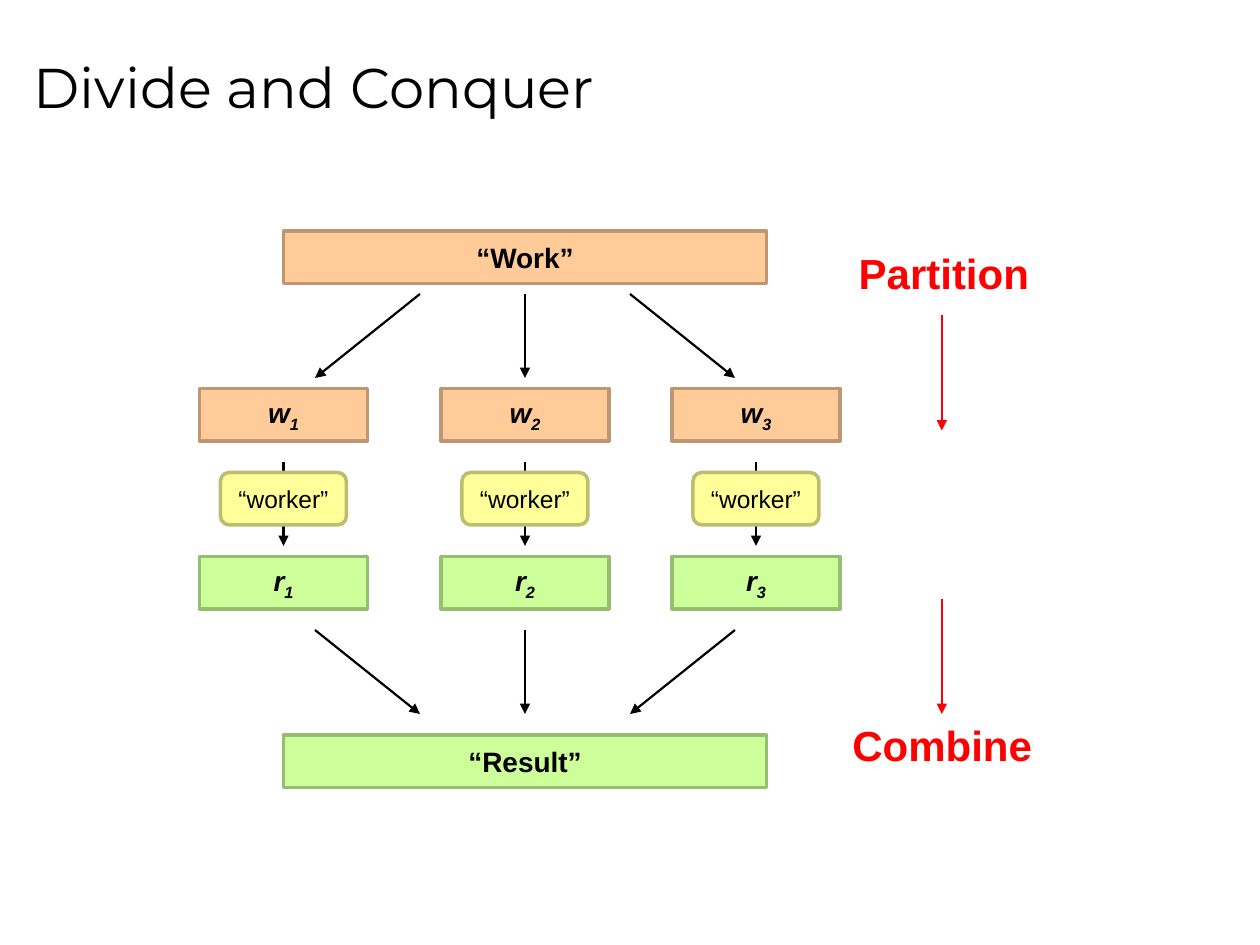
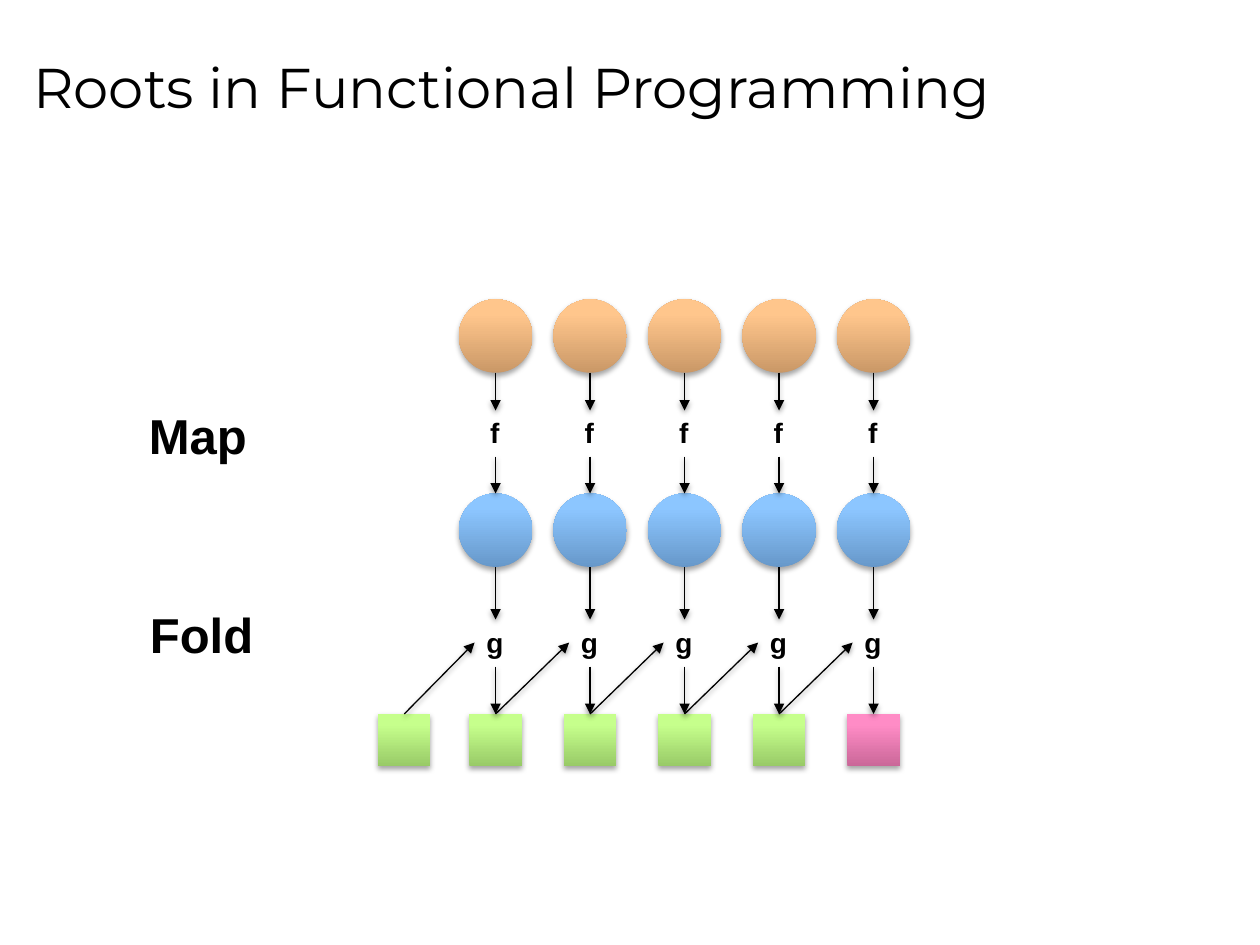
from dataclasses import dataclass
from lxml.etree import SubElement
from pptx import Presentation
from pptx.dml.color import RGBColor
from pptx.enum.shapes import MSO_CONNECTOR, MSO_SHAPE
from pptx.enum.text import MSO_ANCHOR, MSO_AUTO_SIZE, PP_ALIGN
from pptx.oxml.ns import qn
from pptx.util import Inches, Pt

DIVIDE = {
    "title": "Divide and Conquer",
    "ends": [("“Work”", "orange", 22), ("“Result”", "green", 70)],
    "parts": [("w", "orange", 37), ("r", "green", 53)],
    "columns": [("1", 27), ("2", 50), ("3", 72)],
    "worker": "“worker”",
    "fan": [(40, 30), (50, 50), (60, 70)],
    "phases": [("Partition", (80.6, 23, 18.9, 6.1), 30), ("Combine", (80, 67.9, 19.7, 6.1), 57)],
}
ROOTS = {
    "title": "Roots in Functional Programming",
    "lists": [("orange_ball", 28.5), ("blue_ball", 47)],
    "functions": [("f", 39, 3.4), ("g", 59, 4.1)],
    "steps": [(35.5, 39.1), (43.5, 47), (54, 59), (63.5, 68)],
    "stages": [("Map", (13, 38, 11.9, 6.8)), ("Fold", (13.1, 57, 12.4, 6.8))],
    "count": 5,
}


@dataclass(frozen=True)
class Theme:
    unit = Inches(1 / 12)
    ink = "000000"
    accent = "FF0000"
    body = "Arial"
    heading = "Montserrat"
    title_size = 32
    stage_size = 28
    phase_size = 24
    label_size = 16
    worker_size = 14
    boxes = {"orange": ("FFCC99", "BD9771"), "green": ("CCFF99", "97BD71"), "yellow": ("FFFF99", "BDBD71")}
    gradients = {
        "orange_ball": ("CA9867", "FFC68C", "FFC78E"),
        "blue_ball": ("6798CA", "8CC6FF", "8EC7FF"),
        "green_state": ("98CA67", "C6FF8C", "C7FF8E"),
        "pink_state": ("CA6798", "FF8CC6", "FF8EC7"),
    }
    stops = (0, 80, 100)


THEME = Theme()
BOLD = {"bold": True}
VARIABLE = {"bold": True, "italic": True}


def place(*lengths):
    return [round(length * THEME.unit) for length in lengths]


def apply(target, values):
    for name, value in values.items():
        setattr(target, name, value)


def write(holder, pieces, size, style, color=THEME.ink, font=THEME.body, frame=None, align=PP_ALIGN.LEFT):
    apply(holder.text_frame, frame or {})
    paragraph = holder.text_frame.paragraphs[0]
    paragraph.alignment = align
    for index, piece in enumerate(pieces):
        run = paragraph.add_run()
        run.text = piece
        apply(run.font, {"name": font, "size": Pt(size), **style})
        run.font.color.rgb = RGBColor.from_string(color)
        if index:
            run.font._element.set("baseline", "-25000")


def label(slide, area, text, size, color=THEME.ink):
    frame = {"word_wrap": False, "auto_size": MSO_AUTO_SIZE.SHAPE_TO_FIT_TEXT}
    write(slide.shapes.add_textbox(*place(*area)), [text], size, BOLD, color, frame=frame)


def box(slide, area, pieces, palette, size=THEME.label_size, style=BOLD, outline=MSO_SHAPE.RECTANGLE):
    shape = slide.shapes.add_shape(outline, *place(*area))
    fill, edge = THEME.boxes[palette]
    shape.shadow.inherit = False
    shape.fill.solid()
    shape.fill.fore_color.rgb = RGBColor.from_string(fill)
    shape.line.color.rgb = RGBColor.from_string(edge)
    shape.line.width = Pt(2)
    write(shape, pieces, size, style, frame={"vertical_anchor": MSO_ANCHOR.MIDDLE}, align=PP_ALIGN.CENTER)


def cast_shadow(effects, opacity, distance):
    shadow = SubElement(effects, qn("a:outerShdw"), blurRad=str(Pt(3.1)), dist=str(Pt(distance)),
                        dir="5400000", rotWithShape="0")
    color = SubElement(shadow, qn("a:srgbClr"), val=THEME.ink)
    SubElement(color, qn("a:alpha"), val=str(opacity * 1000))


def glossy(slide, outline, center, top, size, palette):
    shape = slide.shapes.add_shape(outline, *place(center - size / 2, top, size, size))
    shape.line.fill.background()
    shape.fill.gradient()
    shape.fill.gradient_angle = 90
    stops = shape.element.spPr.find(qn("a:gradFill")).find(qn("a:gsLst"))
    stops.clear()
    for position, color in zip(THEME.stops, THEME.gradients[palette]):
        stop = SubElement(stops, qn("a:gs"), pos=str(position * 1000))
        SubElement(stop, qn("a:srgbClr"), val=color)
    shape.shadow.inherit = False
    cast_shadow(shape.element.spPr.find(qn("a:effectLst")), 35, 1.8)


def arrow(slide, start, end, width=1.25, color=THEME.ink, shadowed=False):
    line = slide.shapes.add_connector(MSO_CONNECTOR.STRAIGHT, *place(*start, *end))
    line.line.color.rgb = RGBColor.from_string(color)
    line.line.width = Pt(width)
    properties = line.element.spPr
    SubElement(properties.find(qn("a:ln")), qn("a:tailEnd"), type="triangle")
    effects = SubElement(properties, qn("a:effectLst"))
    if shadowed:
        cast_shadow(effects, 38, 1.6)


def titled_slide(deck, title):
    slide = deck.slides.add_slide(deck.slide_layouts[6])
    heading = slide.shapes.add_textbox(*place(2, 1.5, 114, 13.4))
    write(heading, [title], THEME.title_size, {}, font=THEME.heading,
          frame={"word_wrap": True, "vertical_anchor": MSO_ANCHOR.MIDDLE})
    return slide


def divide_slide(deck):
    slide = titled_slide(deck, DIVIDE["title"])
    for text, palette, top in DIVIDE["ends"]:
        box(slide, (27, top, 46, 5), [text], palette)
    for inner, outer in DIVIDE["fan"]:
        arrow(slide, (inner, 28), (outer, 36))
        arrow(slide, (outer, 60), (inner, 68))
    for number, center in DIVIDE["columns"]:
        for letter, palette, top in DIVIDE["parts"]:
            box(slide, (center - 8, top, 16, 5), [letter, number], palette, style=VARIABLE)
        arrow(slide, (center, 44), (center, 52))
        box(slide, (center - 6, 45, 12, 5), [DIVIDE["worker"]], "yellow",
            THEME.worker_size, {}, MSO_SHAPE.ROUNDED_RECTANGLE)
    for phase, area, top in DIVIDE["phases"]:
        label(slide, area, phase, THEME.phase_size, THEME.accent)
        arrow(slide, (89.7, top), (89.7, top + 11), 1.5, THEME.accent)


def roots_slide(deck):
    slide = titled_slide(deck, ROOTS["title"])
    first, pitch, seed = 47.2, 9, 38.5
    centers = [first + pitch * column for column in range(ROOTS["count"])]
    states = [seed, *centers]
    for center, previous in zip(centers, states):
        for palette, top in ROOTS["lists"]:
            glossy(slide, MSO_SHAPE.OVAL, center, top, 7, palette)
        for name, top, width in ROOTS["functions"]:
            label(slide, (center - width / 2, top, width, 4.4), name, THEME.label_size)
    for state in states:
        palette = "pink_state" if state == states[-1] else "green_state"
        glossy(slide, MSO_SHAPE.RECTANGLE, state, 68, 5, palette)
    for center, previous in zip(centers, states):
        for top, bottom in ROOTS["steps"]:
            arrow(slide, (center, top), (center, bottom), 0.75, shadowed=True)
        arrow(slide, (previous, 68), (center - 2, 61.2), 0.75, shadowed=True)
    for stage, area in ROOTS["stages"]:
        label(slide, area, stage, THEME.stage_size)


def main():
    deck = Presentation()
    apply(deck, {"slide_width": Inches(10), "slide_height": Inches(7.5)})
    divide_slide(deck)
    roots_slide(deck)
    deck.save("out.pptx")


if __name__ == "__main__":
    main()
